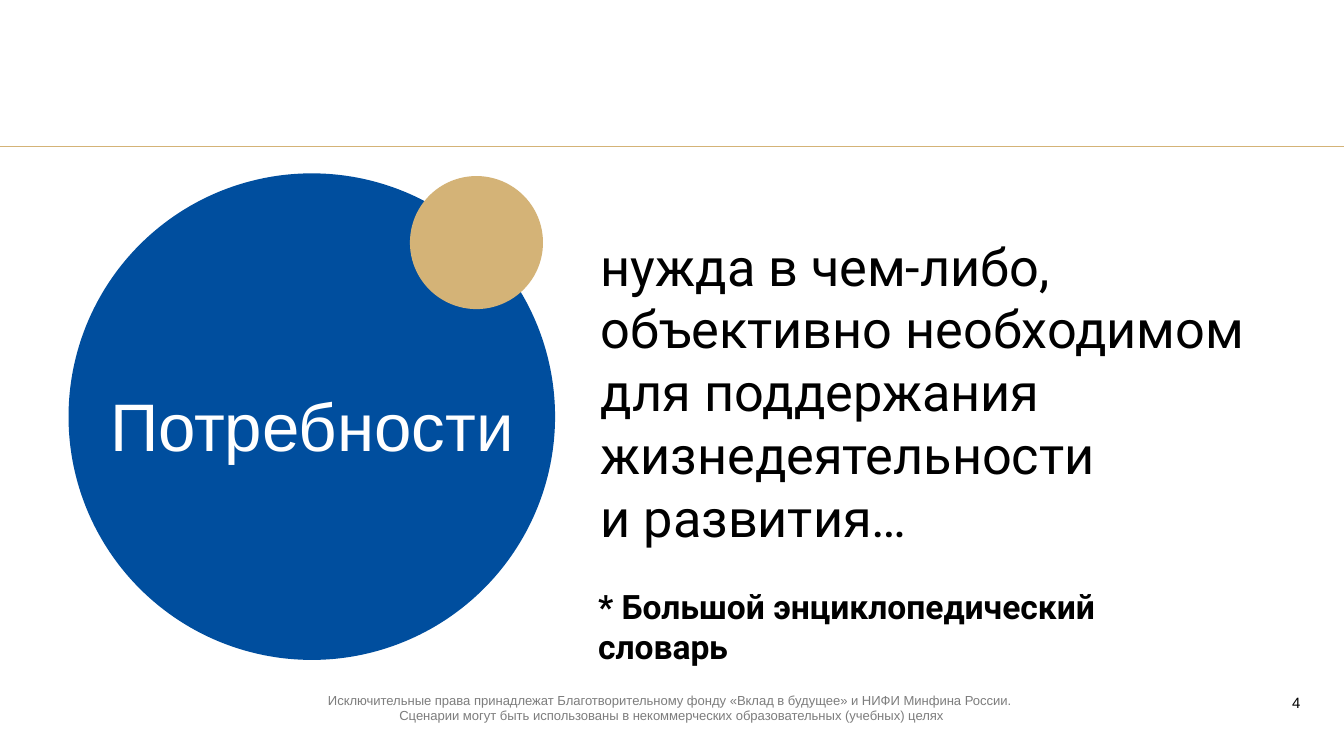
import pptx
import pptx.util
import pptx.dml.color
import pptx.enum.shapes
import pptx.enum.text
import pptx.oxml

Inches = pptx.util.Inches
COLORS = {"blue": "004E9E", "gold": "D4B377", "gray": "7D7D7D",
          "black": "000000", "white": "FFFFFF"}


class SlideBuilder:
    """Hold the style and current slide, and draw each kind of element."""

    def __init__(self, s, colors):
        self.s = s
        self.colors = colors

    def color(self, name):
        return pptx.dml.color.RGBColor.from_string(self.colors[name])

    def text(self, box, lines, size, color="black", font="Arial",
             bold=False, center=False, insets=(0, 0, 0, 0)):
        sp = self.s.shapes.add_textbox(*map(Inches, box))
        tf = sp.text_frame
        tf.word_wrap = True
        tf.margin_left, tf.margin_top, tf.margin_right, tf.margin_bottom = map(Inches, insets)
        p = tf.paragraphs[0]
        if center:
            p.alignment = pptx.enum.text.PP_ALIGN.CENTER
        for i, line in enumerate(lines):
            if i:
                p.add_line_break()
            r = p.add_run()
            r.text = line
            r.font.name = font
            r.font.size = pptx.util.Pt(size)
            r.font.bold = bold
            r.font.color.rgb = self.color(color)

    def circle(self, left, top, diameter, color):
        sp = self.s.shapes.add_shape(
            pptx.enum.shapes.MSO_SHAPE.OVAL,
            *map(Inches, (left, top, diameter, diameter)))
        sp.shadow.inherit = False
        sp.fill.solid()
        sp.fill.fore_color.rgb = self.color(color)
        sp.line.fill.background()

    def rule(self, y, width, color):
        line = self.s.shapes.add_connector(
            pptx.enum.shapes.MSO_CONNECTOR.STRAIGHT,
            Inches(0), Inches(y), Inches(width), Inches(y))
        line.line.color.rgb = self.color(color)
        line.line.width = pptx.util.Pt(0.75)
        effects = pptx.oxml.ns.qn("a:effectLst")
        line._element.spPr.append(line._element.makeelement(effects, {}))


def main():
    prs = pptx.Presentation()
    prs.slide_width, prs.slide_height = Inches(10), Inches(10 * 9 / 16)
    s = SlideBuilder(prs.slides.add_slide(prs.slide_layouts[6]), COLORS)

    s.text((0.69, 5.1, 8.61, 0.68),
           ["Исключительные права принадлежат Благотворительному фонду "
            "«Вклад в будущее» и НИФИ Минфина России. ",
            "Сценарии могут быть использованы в некоммерческих "
            "образовательных (учебных) целях"],
           7, "gray", center=True, insets=(0.1, 0.05, 0.1, 0.05))
    s.text((4.45, 4.36, 4.16, 0.75), ["* Большой энциклопедический словарь"],
           18, font="Roboto", bold=True)
    s.text((4.32, 1.74, 5.49, 3.36),
           ["нужда в чем-либо, объективно необходимом для поддержания "
            "жизнедеятельности", "и развития…"],
           28, font="Roboto", insets=(0.15, 0, 0, 0))
    s.rule(1.09, 10, "gold")
    s.circle(0.51, 1.29, 3.62, "blue")
    s.circle(3.05, 1.31, 0.99, "gold")
    s.text((0.72, 2.81, 3.32, 0.7), ["Потребности"], 36, "white",
           insets=(0.1, 0.05, 0.1, 0.05))
    s.text((9.52, 5.1, 0.25, 0.25), ["4"], 8, center=True, insets=(0.06,) * 4)
    prs.save("out.pptx")


if __name__ == "__main__":
    main()
